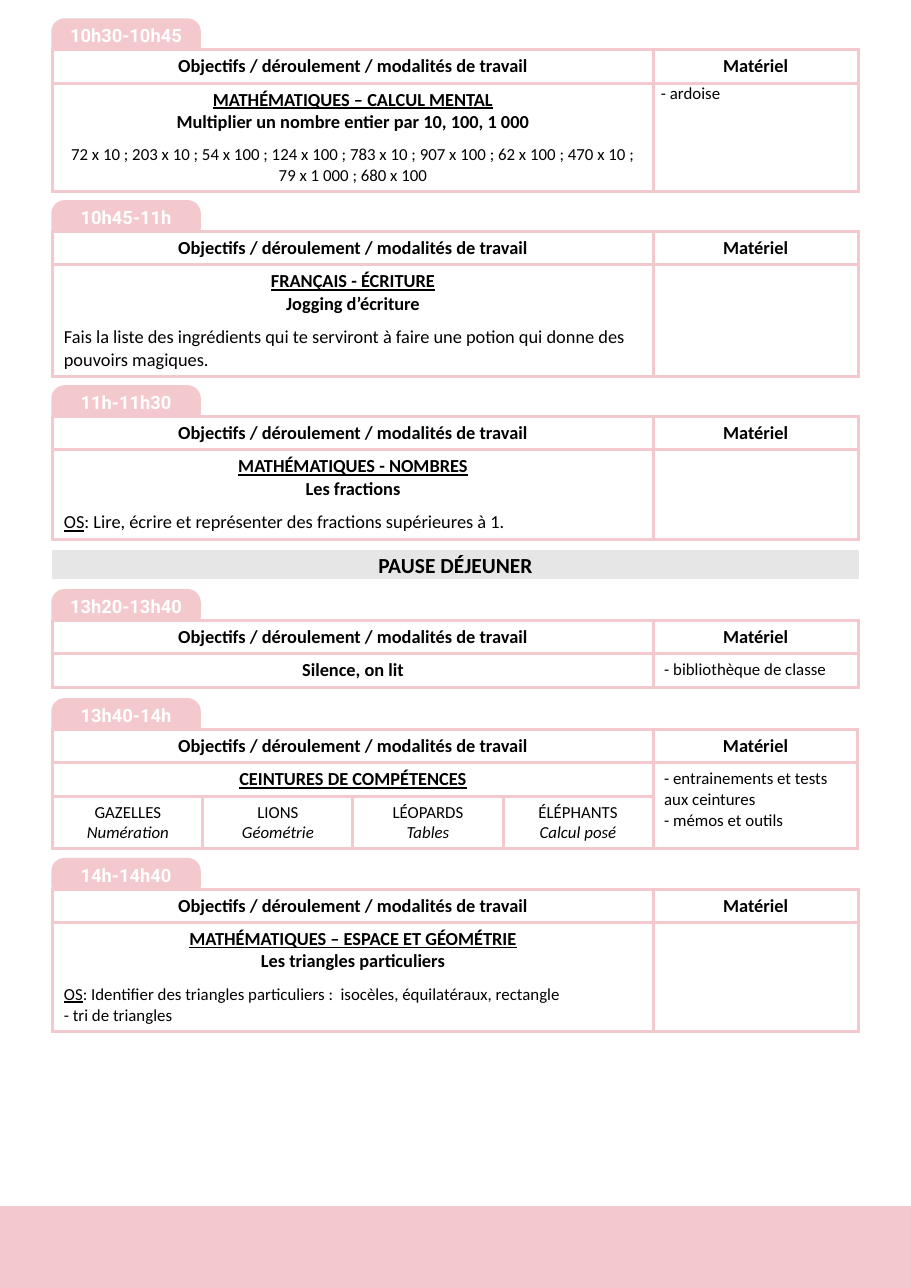
"""Build a one-page class timetable with time tabs, activity tables and a lunch break."""
from dataclasses import dataclass

from lxml.etree import SubElement
from pptx import Presentation
from pptx.dml.color import RGBColor
from pptx.enum.shapes import MSO_SHAPE
from pptx.enum.text import MSO_ANCHOR, PP_ALIGN
from pptx.oxml.ns import qn
from pptx.shapes.autoshape import Shape
from pptx.slide import Slide
from pptx.table import _Cell
from pptx.text.text import TextFrame
from pptx.util import Emu, Pt

PX = 9144
LEFT = 48
COLUMNS = (545, 186)
WIDTH = sum(COLUMNS)
TAB_WIDTH, BAR_HEIGHT = 133, 25
TABLE_OFFSET = 27
HEADER_HEIGHT = 30


@dataclass(frozen=True)
class Theme:
    pink: str = "F4C9CD"
    grey: str = "E7E6E6"
    white: str = "FFFFFF"
    black: str = "000000"
    body_font: str = "Calibri"
    tab_font: str = "Roboto"
    small: int = 11
    normal: int = 12
    large: int = 14
    gap: float = 7.3
    border: float = 2.25


THEME = Theme()


@dataclass(frozen=True)
class Para:
    text: str
    size: int = THEME.normal
    bold: bool = False
    underline: bool = False
    italic: bool = False
    center: bool = False
    before: float = 0
    lead: str = ""
    font: str = THEME.body_font
    color: str = THEME.black


@dataclass(frozen=True)
class Session:
    time: str
    top: int
    height: int
    content: tuple[Para, ...]
    material: tuple[Para, ...] = ()
    material_margins: tuple[int, int] = (10, 5)
    groups: tuple[tuple[str, str], ...] = ()
    groups_height: int = 0


def px(n: float) -> Emu:
    """Convert layout pixels to EMU."""
    return Emu(round(n * PX))


def heading(text: str, underline: bool = False) -> Para:
    """Describe a bold centred line."""
    return Para(text, bold=True, underline=underline, center=True)


def small(text: str, **style) -> Para:
    """Describe a line in the small type size."""
    return Para(text, size=THEME.small, **style)


def write(tf: TextFrame, paras: tuple[Para, ...]) -> None:
    """Fill a text frame with the described paragraphs."""
    for i, para in enumerate(paras):
        p = tf.paragraphs[0] if i == 0 else tf.add_paragraph()
        p.alignment = PP_ALIGN.CENTER if para.center else PP_ALIGN.LEFT
        p.space_before = Pt(para.before)
        p.font.name, p.font.size = para.font, Pt(para.size)
        p.font.bold, p.font.italic = para.bold, para.italic
        p.font.color.rgb = RGBColor.from_string(para.color)
        if para.lead:
            r = p.add_run()
            r.text = para.lead
            r.font.underline = True
        else:
            p.font.underline = para.underline
        p.add_run().text = para.text


def add_bar(s: Slide, kind: MSO_SHAPE, box: tuple[int, int, int, int],
            color: str, line: float, label: Para | None = None) -> Shape:
    """Add a filled shape with an optional centred label."""
    sp = s.shapes.add_shape(kind, *map(px, box))
    sp.shadow.inherit = False
    sp.fill.solid()
    sp.fill.fore_color.rgb = sp.line.color.rgb = RGBColor.from_string(color)
    sp.line.width = Pt(line)
    if label:
        sp.text_frame.vertical_anchor = MSO_ANCHOR.MIDDLE
        write(sp.text_frame, (label,))
    return sp


def style_cell(cell: _Cell) -> None:
    """Give a cell pink borders and a white fill."""
    props = cell._tc.get_or_add_tcPr()
    for side in ("a:lnL", "a:lnR", "a:lnT", "a:lnB"):
        ln = SubElement(props, qn(side), w=str(Pt(THEME.border)))
        fill = SubElement(ln, qn("a:solidFill"))
        SubElement(fill, qn("a:srgbClr"), val=THEME.pink)
    cell.fill.solid()
    cell.fill.fore_color.rgb = RGBColor.from_string(THEME.white)


def write_cell(cell: _Cell, paras: tuple[Para, ...]) -> None:
    """Write vertically centred paragraphs in a cell."""
    cell.vertical_anchor = MSO_ANCHOR.MIDDLE
    write(cell.text_frame, paras)


def add_session(s: Slide, session: Session) -> None:
    """Draw the time tab and the table of one session."""
    parts = len(session.groups) or 1
    widths = [COLUMNS[0] / parts] * parts + [COLUMNS[1]]
    heights = [HEADER_HEIGHT, session.height]
    if session.groups:
        heights.append(session.groups_height)
    frame = s.shapes.add_table(len(heights), len(widths), px(LEFT),
                               px(session.top + TABLE_OFFSET), px(WIDTH), px(sum(heights)))
    table = frame.table
    table.first_row = table.horz_banding = False
    for column, width in zip(table.columns, widths):
        column.width = px(width)
    for row, height in zip(table.rows, heights):
        row.height = px(height)
    for cell in table.iter_cells():
        style_cell(cell)
    if session.groups:
        for row in range(2):
            table.cell(row, 0).merge(table.cell(row, parts - 1))
        table.cell(1, parts).merge(table.cell(2, parts))
    write_cell(table.cell(0, 0), (heading("Objectifs / déroulement / modalités de travail"),))
    write_cell(table.cell(0, parts), (heading("Matériel"),))
    write_cell(table.cell(1, 0), session.content)
    material = table.cell(1, parts)
    side, end = map(px, session.material_margins)
    material.margin_left = material.margin_right = side
    material.margin_top = material.margin_bottom = end
    write(material.text_frame, session.material)
    for i, (name, topic) in enumerate(session.groups):
        write_cell(table.cell(2, i), (small(name, center=True),
                                      small(topic, center=True, italic=True)))
    label = Para(session.time, bold=True, center=True, font=THEME.tab_font, color=THEME.white)
    tab = add_bar(s, MSO_SHAPE.ROUND_2_SAME_RECTANGLE,
                  (LEFT, session.top, TAB_WIDTH, BAR_HEIGHT), THEME.pink, 2, label)
    tab.adjustments[0] = 0.43


SESSIONS = (
    Session("10h30-10h45", 18, 97, (
        heading("MATHÉMATIQUES – CALCUL MENTAL", True),
        heading("Multiplier un nombre entier par 10, 100, 1 000"),
        small("72 x 10 ; 203 x 10 ; 54 x 100 ; 124 x 100 ; 783 x 10 ; 907 x 100 ; "
              "62 x 100 ; 470 x 10 ; 79 x 1 000 ; 680 x 100", center=True, before=THEME.gap),
    ), (small("- ardoise"),), (7, 0)),
    Session("10h45-11h", 183, 100, (
        heading("FRANÇAIS - ÉCRITURE", True),
        heading("Jogging d’écriture"),
        Para("Fais la liste des ingrédients qui te serviront à faire une potion "
             "qui donne des pouvoirs magiques.", before=THEME.gap),
    )),
    Session("11h-11h30", 351, 80, (
        heading("MATHÉMATIQUES - NOMBRES", True),
        heading("Les fractions"),
        Para(": Lire, écrire et représenter des fractions supérieures à 1.",
             lead="OS", before=THEME.gap),
    )),
    Session("13h20-13h40", 536, 30, (heading("Silence, on lit"),),
            (small("- bibliothèque de classe"),)),
    Session("13h40-14h", 635, 30, (heading("CEINTURES DE COMPÉTENCES", True),),
            (small("- entrainements et tests aux ceintures"), small("- mémos et outils")),
            groups=(("GAZELLES", "Numération"), ("LIONS", "Géométrie"),
                    ("LÉOPARDS", "Tables"), ("ÉLÉPHANTS", "Calcul posé")),
            groups_height=47),
    Session("14h-14h40", 780, 97, (
        heading("MATHÉMATIQUES – ESPACE ET GÉOMÉTRIE", True),
        heading("Les triangles particuliers"),
        small(": Identifier des triangles particuliers :  isocèles, équilatéraux, rectangle",
              lead="OS", before=THEME.gap),
        small("- tri de triangles"),
    )),
)

prs = Presentation()
prs.slide_width, prs.slide_height = px(827), px(1169)
s = prs.slides.add_slide(prs.slide_layouts[6])
add_bar(s, MSO_SHAPE.RECTANGLE, (0, 1095, 827, 74), THEME.pink, 1)
for session in SESSIONS:
    add_session(s, session)
add_bar(s, MSO_SHAPE.RECTANGLE, (LEFT, 500, WIDTH, BAR_HEIGHT), THEME.grey, 1,
        Para("PAUSE DÉJEUNER", size=THEME.large, bold=True, center=True))
prs.save("out.pptx")
